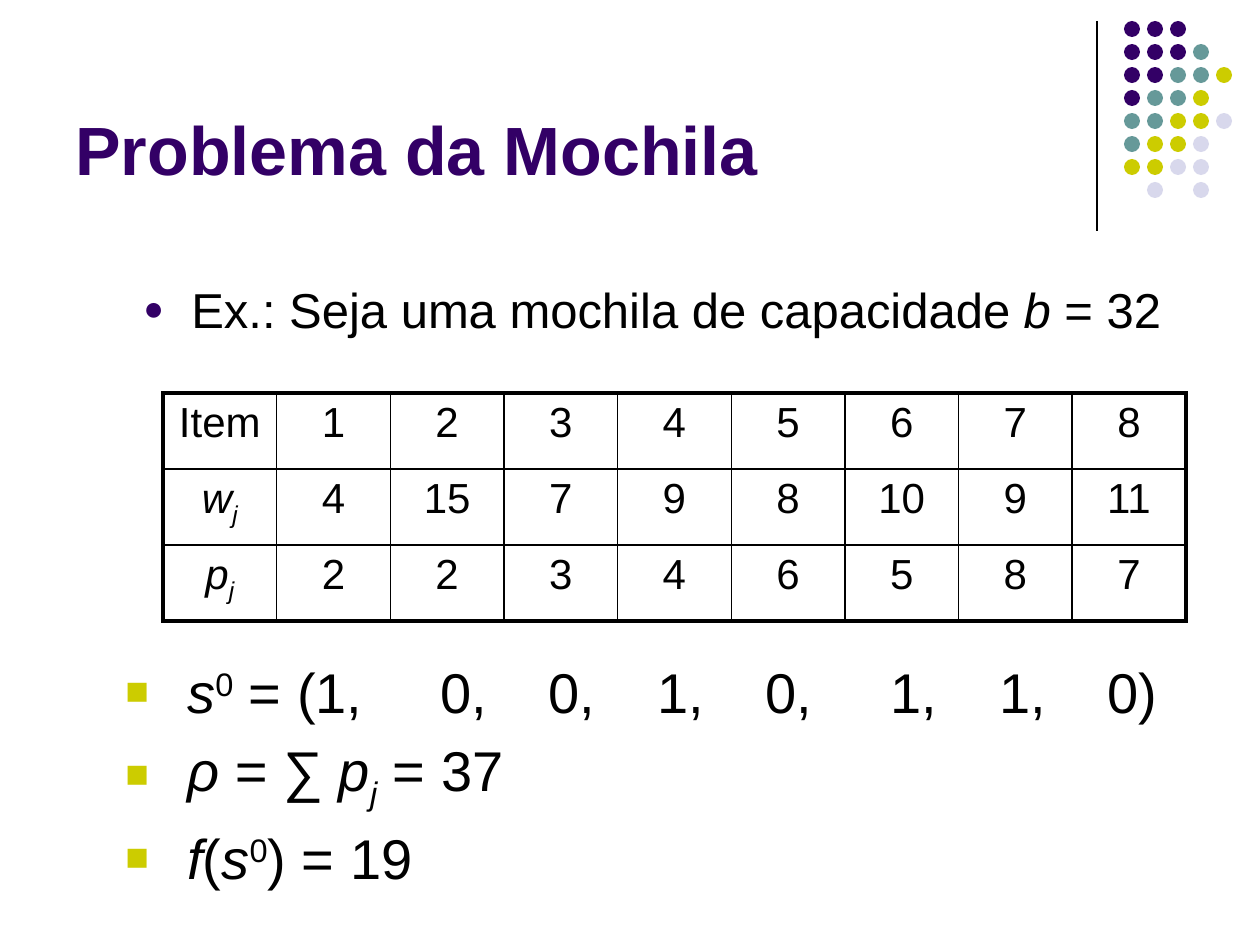
from pptx import Presentation
from pptx.dml.color import RGBColor as Rgb
from pptx.enum.shapes import MSO_CONNECTOR as Conn, MSO_SHAPE as Shape
from pptx.enum.text import MSO_ANCHOR as Anchor, PP_ALIGN as Align
from pptx.oxml.ns import qn
from pptx.util import Emu, Pt
from lxml.etree import SubElement as Sub

HUE = {"ink": "000000", "plum": "330066", "teal": "669999",
       "lime": "CCCC00", "mist": "D8D8EC"}
DOTS = ["ppp", "pppt", "ppttl", "pttl", "ttllm", "tllm", "llmm", " m m"]
KEYS = {"p": "plum", "t": "teal", "l": "lime", "m": "mist"}
BASE = {"^": "30000", "_": "-25000"}
HEAD = [("Problema da Mochila", "")]
LEAD = [("Ex.: Seja uma mochila de capacidade ", ""), ("b", "i"), (" = 32", "")]
SUMS = [
    [("s", "i"), ("0", "^"), (" = (1,\t0,\t0,\t1,\t0,\t1,\t1,\t0)", "")],
    [("ρ = ", "i"), ("∑ ", ""), ("p", "i"), ("j", "i_"), (" = 37", "")],
    [("f", "i"), ("(", ""), ("s", "i"), ("0", "^"), (") = 19", "")],
]
TABS = [315, 423, 532, 640, 765, 874, 982]
GRID = [
    [[("Item", "")], 1, 2, 3, 4, 5, 6, 7, 8],
    [[("w", "i"), ("j", "i_")], 4, 15, 7, 9, 8, 10, 9, 11],
    [[("p", "i"), ("j", "i_")], 2, 2, 3, 4, 6, 5, 8, 7],
]


def px(num):
    """Turn slide pixels into EMU."""
    return Emu(round(num * 914400 / 126))


def tint(name):
    """Look up a colour by name."""
    return Rgb.from_string(HUE[name])


def apply(obj, form):
    """Set each attribute that the format names."""
    for key, val in form.items():
        setattr(obj, key, val)


def write(para, runs, size, hue="ink", bold=False):
    """Fill a paragraph with styled runs."""
    for text, mode in runs:
        run = para.add_run()
        run.text = text
        apply(run.font, {"name": "Arial", "size": Pt(size), "bold": bold,
                         "italic": "i" in mode})
        run.font.color.rgb = tint(hue)
        for mark in BASE.keys() & set(mode):
            run.font._element.set("baseline", BASE[mark])


def bullet(para, mark, hue, dent, tabs=()):
    """Give a paragraph a hanging bullet and tab stops."""
    prop = para._p.get_or_add_pPr()
    prop.set("marL", str(px(dent)))
    prop.set("indent", str(-px(dent)))
    Sub(Sub(prop, qn("a:buClr")), qn("a:srgbClr"), val=HUE[hue])
    Sub(prop, qn("a:buSzPct"), val="70000")
    Sub(prop, qn("a:buFont"), typeface="Arial")
    Sub(prop, qn("a:buChar"), char=mark)
    if tabs:
        stops = Sub(prop, qn("a:tabLst"))
        for pos in tabs:
            Sub(stops, qn("a:tab"), pos=str(px(pos)), algn="l")


def box(slide, area, anchor=Anchor.TOP):
    """Add a wrapping text box and return its frame."""
    frame = slide.shapes.add_textbox(*map(px, area)).text_frame
    apply(frame, {"word_wrap": True, "vertical_anchor": anchor})
    return frame


def rule(slide, x, top, end):
    """Draw the upright line."""
    line = slide.shapes.add_connector(Conn.STRAIGHT, *map(px, (x, top, x, end)))
    line.line.width = Pt(0.75)
    line.line.color.rgb = tint("ink")
    Sub(line._element.spPr, qn("a:effectLst"))


def dots(slide, left, top, step, size):
    """Draw the dot pattern on a square grid."""
    for row, keys in enumerate(DOTS):
        for col, key in enumerate(keys):
            if key in KEYS:
                area = (left + col * step, top + row * step, size, size)
                dot = slide.shapes.add_shape(Shape.OVAL, *map(px, area))
                dot.shadow.inherit = False
                dot.fill.solid()
                dot.fill.fore_color.rgb = tint(KEYS[key])
                dot.line.fill.background()


def edge(cell, sides):
    """Draw cell borders, thick on the outer sides."""
    prop = cell._tc.get_or_add_tcPr()
    for spot, (side, outer) in enumerate(sides.items()):
        line = prop.makeelement(qn(f"a:ln{side}"),
                                {"w": str(Pt(2.25 if outer else 1))})
        Sub(Sub(line, qn("a:solidFill")), qn("a:srgbClr"), val=HUE["ink"])
        prop.insert(spot, line)


def table(slide, area):
    """Add the item table with a framed grid."""
    rows, cols = len(GRID), len(GRID[0])
    grid = slide.shapes.add_table(rows, cols, *map(px, area)).table
    apply(grid, {"first_row": False, "horz_banding": False})
    for r, line in enumerate(GRID):
        for c, item in enumerate(line):
            cell = grid.cell(r, c)
            cell.fill.background()
            para = cell.text_frame.paragraphs[0]
            apply(para, {"alignment": Align.CENTER, "space_before": Pt(4.8)})
            write(para, item if c == 0 else [(str(item), "")], 24)
            edge(cell, {"L": c == 0, "R": c == cols - 1,
                        "T": r == 0, "B": r == rows - 1})


def main():
    """Build and save the slide."""
    deck = Presentation()
    apply(deck, {"slide_width": px(1260), "slide_height": px(945)})
    slide = deck.slides.add_slide(deck.slide_layouts[6])
    rule(slide, 1097, 21, 231)
    dots(slide, 1124, 21, 23, 16)
    title = box(slide, (63, 16, 1040, 179), Anchor.BOTTOM)
    write(title.paragraphs[0], HEAD, 39, "plum", True)
    lead = box(slide, (131, 273, 1085, 120)).paragraphs[0]
    lead.space_before = Pt(5.6)
    bullet(lead, "●", "plum", 48)
    write(lead, LEAD, 28)
    table(slide, (163, 393, 1023, 228))
    sums = box(slide, (113, 651, 1081, 238))
    for num, runs in enumerate(SUMS):
        para = sums.add_paragraph() if num else sums.paragraphs[0]
        para.space_before = Pt(6.4)
        bullet(para, "■", "lime", 62, () if num else TABS)
        write(para, runs, 32)
    deck.save("out.pptx")


if __name__ == "__main__":
    main()
